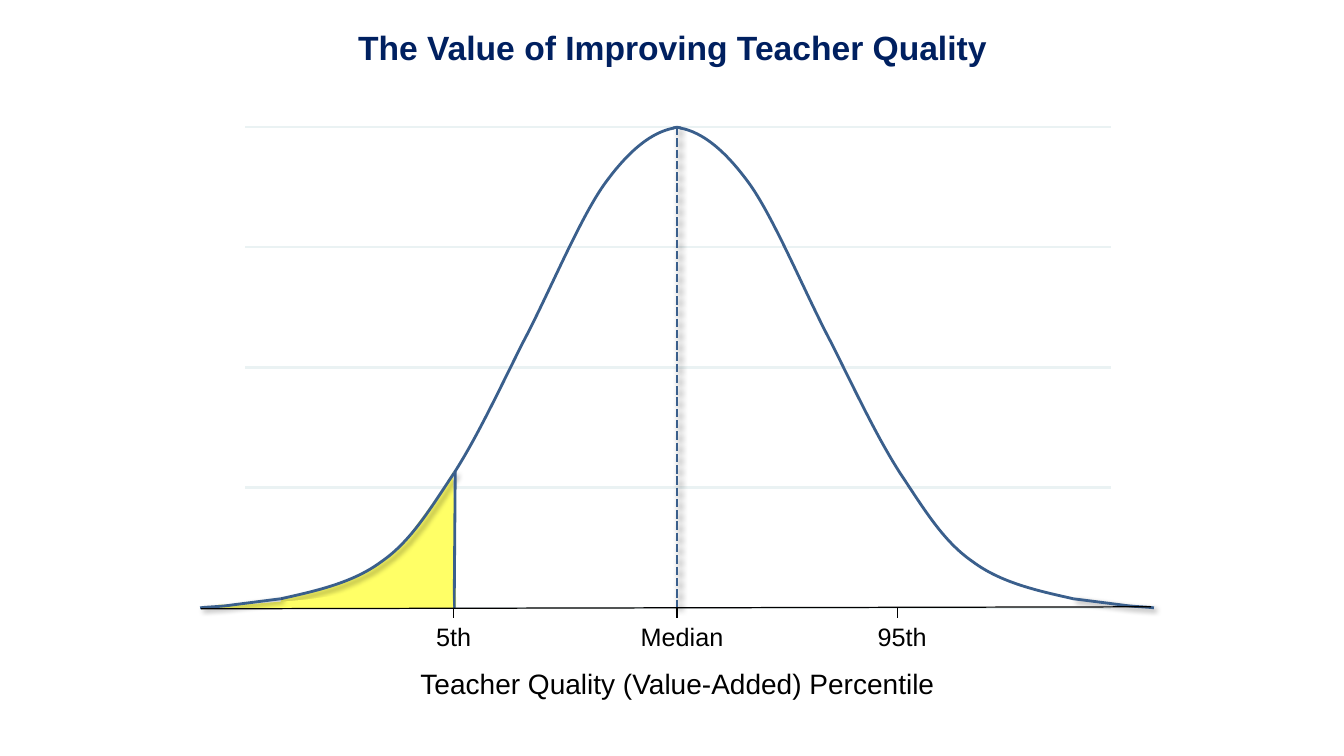
from lxml.etree import SubElement
from pptx import Presentation
from pptx.dml.color import RGBColor
from pptx.enum.dml import MSO_LINE as Dash
from pptx.enum.shapes import MSO_CONNECTOR as Link
from pptx.enum.text import MSO_ANCHOR as Anchor, MSO_AUTO_SIZE as Fit, PP_ALIGN as Align
from pptx.oxml.ns import qn
from pptx.util import Inches, Pt

NAVY = RGBColor(0x00, 0x20, 0x60)
BLUE = RGBColor(0x3A, 0x5F, 0x8C)
PALE = RGBColor(0xEA, 0xF2, 0xF3)
YELLOW = RGBColor(0xFF, 0xFF, 0x66)
BLACK = RGBColor(0, 0, 0)

BASE = 4.77
TAIL = [(-3.93, 4.68), (-4.4, 4.74), (-4.53, 4.76, -4.66, 4.76, -4.73, 4.77)]
LOW = [(-3.93, 4.68), (-3.57, 4.6, -3.21, 4.52, -2.93, 4.31),
       (-2.64, 4.11, -2.45, 3.79, -2.21, 3.43)]
HIGH = [(-2.21, 3.43), (-1.98, 3.07, -1.77, 2.62, -1.53, 2.14),
        (-1.28, 1.67, -0.98, 0.94, -0.73, 0.58),
        (-0.48, 0.23, -0.25, 0.05, -0.03, 0.01)]
CAP = [(-0.04, 0.01), (0, 0, 0.01, 0, 0.04, 0.01)]
WEDGE = [(-2.22, 3.42), (-2.19, 4.76), (-3.93, 4.76), (-3.93, 4.68), (-3.65, 4.62),
         (-3.49, 4.57, -3.32, 4.52, -3.18, 4.46), (-2.89, 4.29), (-2.68, 4.08),
         (-2.35, 3.63)]
TOE = [(-2.25, 4.34), (-2.22, 4.77), (-4.55, 4.77), (-4.55, 4.74), (-4.18, 4.73),
       (-3.96, 4.71, -3.74, 4.7, -3.54, 4.67), (-3.16, 4.62), (-2.87, 4.56),
       (-2.43, 4.41)]
MARKS = [("5th", -2.22, -2.39, 0.35), ("95th", 2.19, 1.99, 0.49),
         ("Median", 0, -0.36, 0.83)]


def bend(shape, parts):
    """Join each run of three segments that forms a cubic curve."""
    lines = iter(list(shape._element.iter(qn("a:lnTo"))))
    for part in parts[1:]:
        first = next(lines)
        if len(part) == 6:
            first.tag = qn("a:cubicBezTo")
            for _ in range(2):
                extra = next(lines)
                first.append(extra[0])
                extra.getparent().remove(extra)


def effect(shape, shade):
    """Give a shape a soft shadow, or none."""
    props = shape._element.spPr
    for old in props.findall(qn("a:effectLst")):
        props.remove(old)
    group = SubElement(props, qn("a:effectLst"))
    if shade:
        cast = SubElement(group, qn("a:outerShdw"), blurRad=str(Pt(4)), dist=str(Pt(3)),
                          dir="2700000", algn="tl", rotWithShape="0")
        tint = SubElement(cast, qn("a:srgbClr"), val="000000")
        SubElement(tint, qn("a:alpha"), val="40000")


def rule(slide, start, end, color, width, dash=None, shade=False):
    """Draw a straight line between two points in inches."""
    line = slide.shapes.add_connector(Link.STRAIGHT, *map(Inches, start + end))
    line.line.color.rgb = color
    line.line.width = Pt(width)
    if dash:
        line.line.dash_style = dash
    effect(line, shade)


def curve(slide, mid, top, parts, side=1, fill=None, shade=False):
    """Draw an outline around the median axis; side -1 mirrors it."""
    dots = [(Inches(mid + side * part[i]), Inches(top + part[i + 1]))
            for part in parts for i in range(0, len(part), 2)]
    pen = slide.shapes.build_freeform(*dots[0])
    pen.add_line_segments(dots[1:], close=fill is not None)
    shape = pen.convert_to_shape()
    bend(shape, parts)
    if fill is None:
        shape.fill.background()
        shape.line.color.rgb = BLUE
        shape.line.width = Pt(2)
    else:
        shape.fill.solid()
        shape.fill.fore_color.rgb = fill
        shape.line.fill.background()
    effect(shape, shade)


def label(slide, text, box, size, align=Align.LEFT, wrap=False):
    """Write one line of black text without insets."""
    frame = slide.shapes.add_textbox(*map(Inches, box)).text_frame
    frame.margin_left = frame.margin_right = frame.margin_top = frame.margin_bottom = 0
    frame.word_wrap = wrap
    frame.auto_size = Fit.SHAPE_TO_FIT_TEXT
    line = frame.paragraphs[0]
    line.text = text
    line.alignment = align
    line.font.size, line.font.name, line.font.color.rgb = Pt(size), "Arial", BLACK


def title(slide, text, box):
    """Fill and format the title placeholder."""
    head = slide.shapes.title
    head.left, head.top, head.width, head.height = map(Inches, box)
    frame = head.text_frame
    frame.vertical_anchor = Anchor.TOP
    frame.word_wrap = True
    frame.auto_size = Fit.SHAPE_TO_FIT_TEXT
    line = frame.paragraphs[0]
    line.text = text
    line.alignment = Align.CENTER
    font = line.font
    font.size, font.name, font.bold, font.color.rgb = Pt(24), "Arial", True, NAVY


def grid(slide, mid, top):
    """Draw the level lines, the median line and the ticks."""
    for row in range(5):
        y = top + row * BASE / 4
        rule(slide, (mid - 4.28, y), (mid + 4.3, y), PALE, 1.75)
    rule(slide, (mid, top), (mid, top + BASE), BLUE, 2, Dash.SQUARE_DOT, True)
    for _, x, _, _ in MARKS:
        rule(slide, (mid + x, top + BASE), (mid + x, top + BASE + 0.1), BLACK, 0.88)


def bell(slide, mid, top):
    """Draw the bell curve with its shaded lower tail."""
    curve(slide, mid, top, HIGH)
    curve(slide, mid, top, LOW + HIGH[1:], side=-1)
    curve(slide, mid, top, CAP)
    curve(slide, mid, top, WEDGE, fill=YELLOW)
    curve(slide, mid, top, LOW, shade=True)
    rule(slide, (mid - 2.21, top + BASE), (mid - 2.2, top + 3.42), BLUE, 2)
    curve(slide, mid, top, TOE, fill=YELLOW)
    for side in (1, -1):
        curve(slide, mid, top, TAIL, side=side, shade=True)
    rule(slide, (mid - 4.72, top + 4.78), (mid + 4.7, top + 4.76), BLACK, 0.88)


def plot(slide, box):
    """Build the chart area inside its box."""
    left, top, width, _ = box
    mid = left + width / 2
    grid(slide, mid, top)
    bell(slide, mid, top)
    for text, _, x, wide in MARKS:
        label(slide, text, (mid + x, top + 4.9, wide, 0.3), 18)
    label(slide, "Teacher Quality (Value-Added) Percentile",
          (mid - 4.14, top + 5.35, 8.29, 0.34), 20, Align.CENTER, True)


def main():
    """Build and save the slide."""
    deck = Presentation()
    deck.slide_width, deck.slide_height = Inches(13.33), Inches(7.5)
    slide = deck.slides.add_slide(deck.slide_layouts[5])
    plot(slide, (1.99, 1.26, 9.45, 5.69))
    title(slide, "The Value of Improving Teacher Quality", (1.67, 0.22, 10, 0.5))
    deck.save("out.pptx")


if __name__ == "__main__":
    main()
